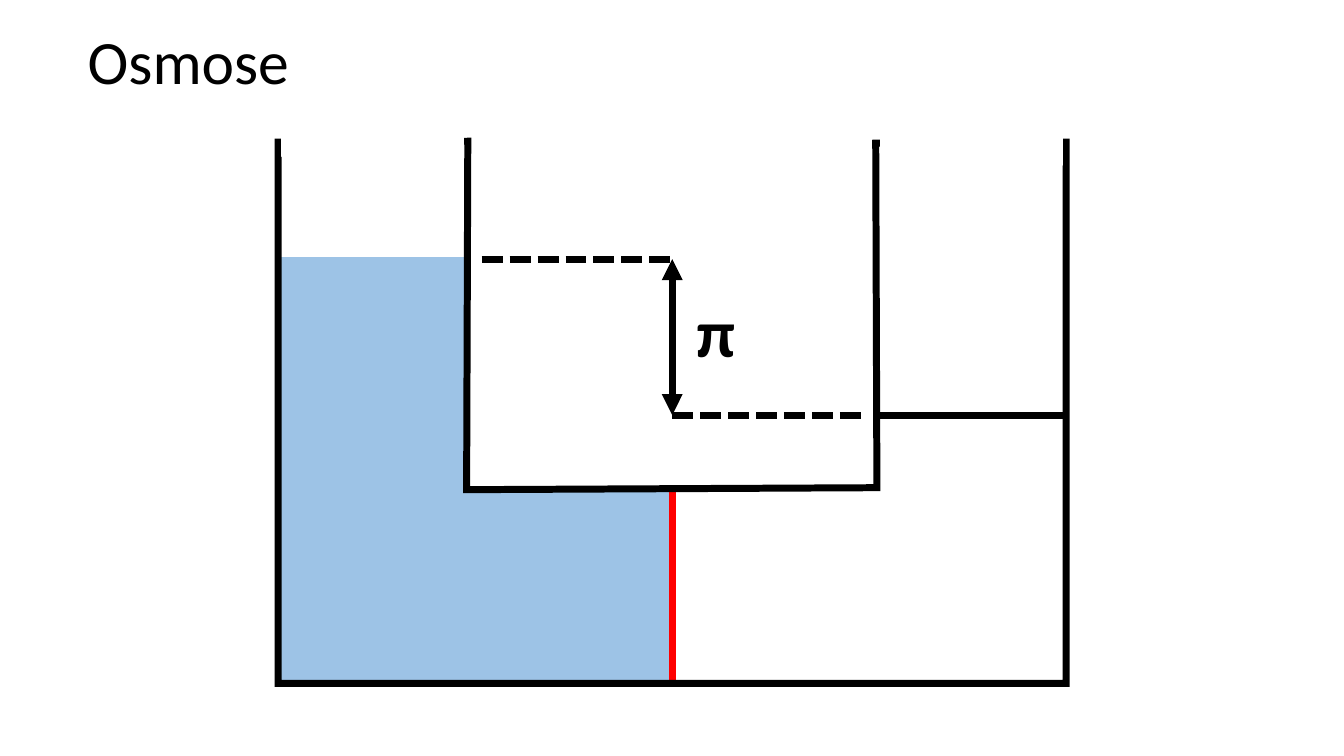
from dataclasses import dataclass

from lxml.etree import SubElement
from pptx import Presentation
from pptx.dml.color import RGBColor
from pptx.dml.line import LineFormat
from pptx.enum.dml import MSO_LINE
from pptx.enum.shapes import MSO_CONNECTOR, MSO_SHAPE
from pptx.enum.text import MSO_ANCHOR, MSO_AUTO_SIZE
from pptx.oxml.ns import qn
from pptx.shapes.shapetree import SlideShapes
from pptx.util import Cm, Pt

BLACK, WHITE, WATER, RED = "000000", "FFFFFF", "9DC3E6", "FF0000"
MID = 16.94  # membrane and pressure arrow
HIGH, LOW = 6.53, 10.46  # liquid levels
FLOOR = 17.22
DASH = 4.8


@dataclass
class Block:
    left: float
    top: float
    width: float
    height: float
    color: str
    weight: float


@dataclass
class Rule:
    x1: float
    y1: float
    x2: float
    y2: float
    color: str = BLACK
    dashed: bool = False
    arrows: bool = False


@dataclass
class Label:
    text: str
    left: float
    top: float
    width: float
    height: float
    size: float
    bold: bool = False
    spacing: float = 1.0
    grow: bool = False


BACK = [
    Block(4.88, 2.08, 24.13, 16.13, WHITE, 5),
    Block(8.5, 12.38, 8.43, 4.8, WATER, 3),
    Block(7.06, HIGH, 4.7, 10.69, WATER, 3),
]
MEMBRANE = Rule(MID, 12.37, MID, FLOOR, RED)
VESSEL = [
    (7.01, 3.58), (11.79, 3.56), (11.76, 12.34), (22.1, 12.29),
    (22.07, 3.61), (26.87, 3.58), (26.87, FLOOR), (7.01, FLOOR),
]
OPENINGS = [
    Block(7.09, 2.69, 4.6, 1.24, WHITE, 1),
    Block(22.2, 2.92, 4.57, 1.24, WHITE, 1),
]
LEVELS = [
    Rule(22.05, LOW, 26.85, LOW),
    Rule(MID - DASH, HIGH, MID, HIGH, dashed=True),
    Rule(MID, LOW, MID + DASH, LOW, dashed=True),
    Rule(MID, LOW, MID, HIGH, arrows=True),
]
LABELS = [
    Label("π", 17.3, 7.19, 1.68, 2.31, 48, bold=True, grow=True),
    Label("Osmose", 1.96, 0.66, 28.47, 2.87, 44, spacing=0.9),
]


def rgb(code: str) -> RGBColor:
    return RGBColor.from_string(code)


def stroke(line: LineFormat, color: str, weight: float) -> None:
    line.color.rgb = rgb(color)
    line.width = Pt(weight)


def add_block(shapes: SlideShapes, block: Block) -> None:
    box = shapes.add_shape(MSO_SHAPE.RECTANGLE, Cm(block.left), Cm(block.top),
                           Cm(block.width), Cm(block.height))
    box.shadow.inherit = False
    box.fill.solid()
    box.fill.fore_color.rgb = rgb(block.color)
    stroke(box.line, block.color, block.weight)


def add_rule(shapes: SlideShapes, rule: Rule) -> None:
    link = shapes.add_connector(MSO_CONNECTOR.STRAIGHT, Cm(rule.x1), Cm(rule.y1),
                                Cm(rule.x2), Cm(rule.y2))
    stroke(link.line, rule.color, 5)
    if rule.dashed:
        link.line.dash_style = MSO_LINE.SQUARE_DOT
    props = link._element.spPr
    if rule.arrows:
        for end in ("a:headEnd", "a:tailEnd"):
            SubElement(props.find(qn("a:ln")), qn(end), type="triangle")
    SubElement(props, qn("a:effectLst"))


def add_vessel(shapes: SlideShapes, points: list[tuple[float, float]]) -> None:
    start, *rest = [(Cm(x), Cm(y)) for x, y in points]
    pen = shapes.build_freeform(*start)
    pen.add_line_segments(rest, close=True)
    wall = pen.convert_to_shape()
    wall.shadow.inherit = False
    wall.fill.background()
    stroke(wall.line, BLACK, 5)
    SubElement(wall._element.spPr.find(qn("a:ln")), qn("a:miter"), lim="800000")


def add_label(shapes: SlideShapes, label: Label) -> None:
    box = shapes.add_textbox(Cm(label.left), Cm(label.top),
                             Cm(label.width), Cm(label.height))
    frame = box.text_frame
    frame.word_wrap = True
    frame.vertical_anchor = MSO_ANCHOR.TOP
    if label.grow:
        frame.auto_size = MSO_AUTO_SIZE.SHAPE_TO_FIT_TEXT
    frame.text = label.text
    line = frame.paragraphs[0]
    line.line_spacing = label.spacing
    font = line.runs[0].font
    font.name = "Calibri"
    font.size = Pt(label.size)
    font.bold = label.bold
    font.color.rgb = rgb(BLACK)


def main() -> None:
    deck = Presentation()
    deck.slide_width, deck.slide_height = Cm(33.87), Cm(19.05)
    shapes = deck.slides.add_slide(deck.slide_layouts[6]).shapes
    for block in BACK:
        add_block(shapes, block)
    add_rule(shapes, MEMBRANE)
    add_vessel(shapes, VESSEL)
    for block in OPENINGS:
        add_block(shapes, block)
    for rule in LEVELS:
        add_rule(shapes, rule)
    for label in LABELS:
        add_label(shapes, label)
    deck.save("out.pptx")


if __name__ == "__main__":
    main()
